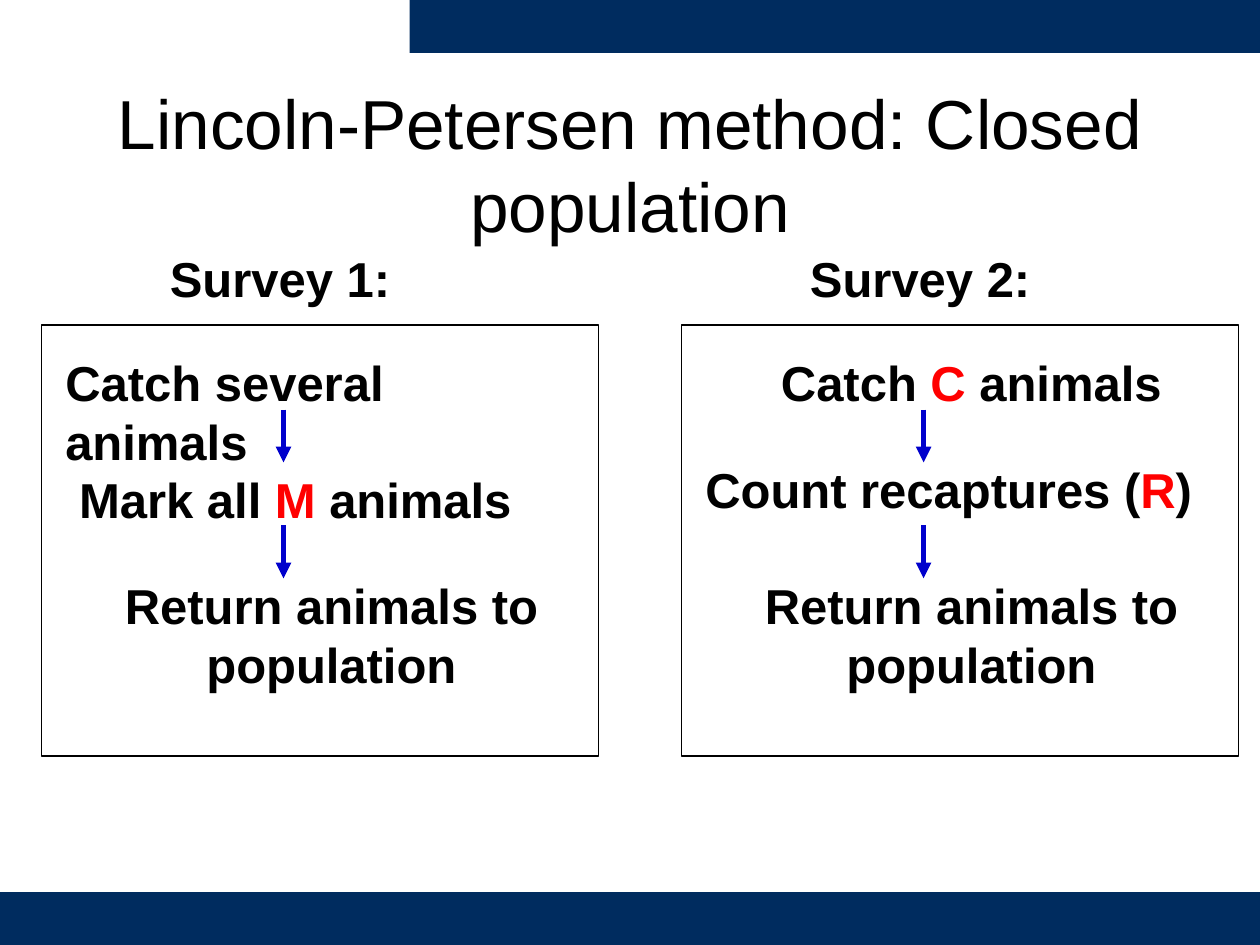
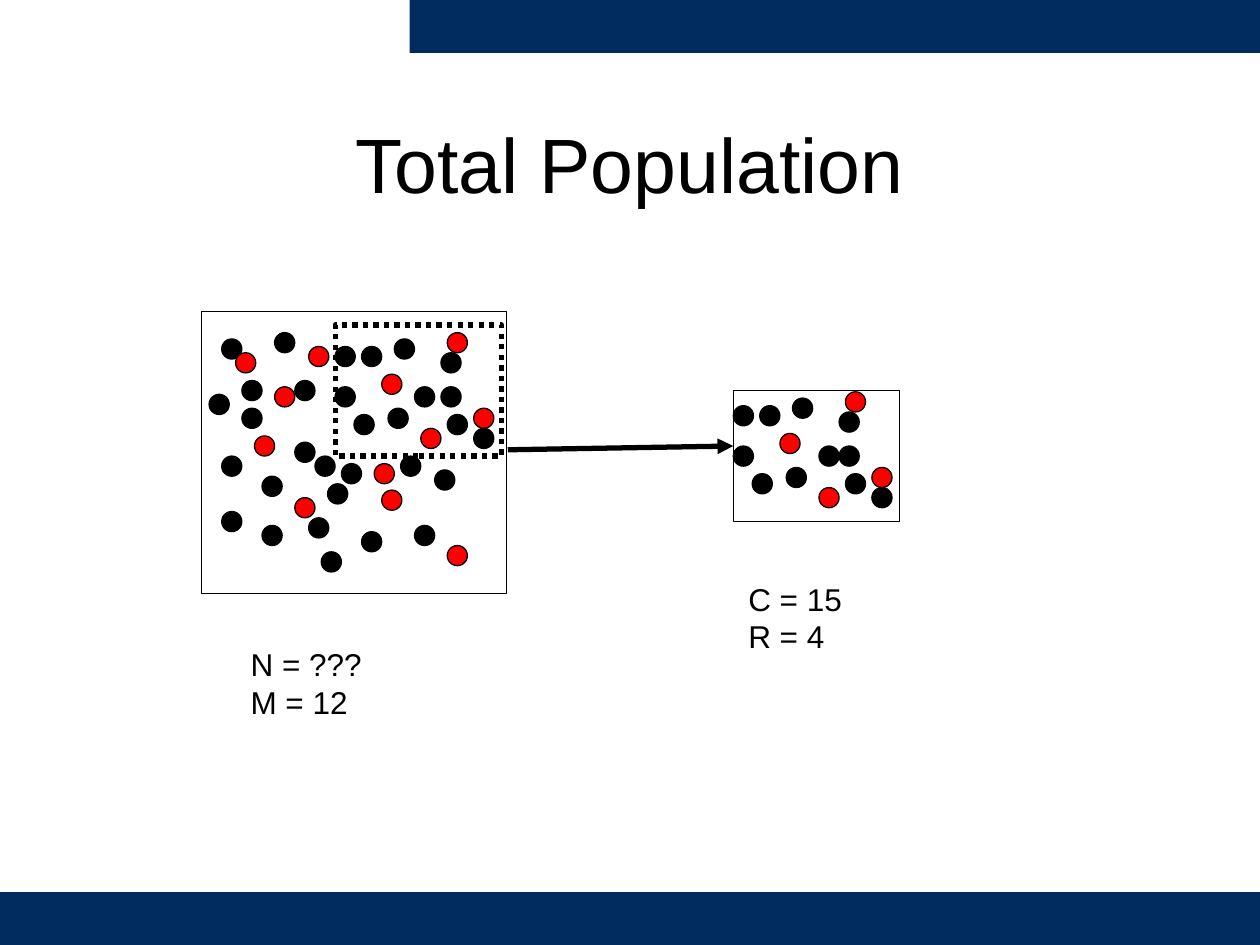
from lxml import etree
from pptx import Presentation
from pptx.dml.color import RGBColor
from pptx.enum import dml, shapes, text
from pptx.oxml.ns import qn
from pptx.util import Inches, Pt

NAVY, BLACK, RED, BLUE = "002C5F", "000000", "FF0000", "0000CC"
TITLE_ONLY = 5
DOT = 0.16

COLUMN_STEP = 5.08
# heading, then (left within column, top, runs); runs at odd places are red
SURVEYS = [
    ("Survey 1:", [(0.42, 2.75, ["Catch several animals"]),
                   (0.53, 3.68, ["Mark all ", "M", " animals"])]),
    ("Survey 2:", [(1.02, 2.75, ["Catch ", "C", " animals"]),
                   (0.42, 3.6, ["Count recaptures (", "R", ")"])]),
]

SAMPLE_SHIFT = (3.16, 0.47)
UNMARKED = [
    (1.76, 2.69), (3.29, 4.17), (1.76, 3.62), (3.18, 3.62), (2.6, 3.84),
    (2.08, 3.78), (2.18, 2.64), (1.66, 3.13), (1.92, 3.02), (2.34, 3.02),
    (2.34, 3.51), (1.92, 3.24), (2.08, 4.17), (2.71, 3.68), (3.45, 3.73),
    (2.55, 4.38), (1.76, 4.06), (2.5, 3.62), (2.87, 4.22), (2.45, 4.11),
]
MARKED = [
    (1.87, 2.8), (2.45, 2.75), (2.02, 3.46), (3.55, 4.33),
    (3.03, 3.89), (2.34, 3.95), (2.97, 3.68), (2.18, 3.07),
]
CAUGHT_UNMARKED = [
    (3.5, 3.07), (2.66, 2.75), (3.13, 2.69), (2.66, 3.07), (3.5, 2.8),
    (3.76, 3.4), (3.08, 3.24), (2.81, 3.29), (2.87, 2.75), (3.55, 3.29),
]
CAUGHT_MARKED = [(3.76, 3.24), (3.55, 2.64), (3.03, 2.97), (3.34, 3.4)]


def rgb(value):
    return RGBColor.from_string(value)


class Deck:
    def __init__(self):
        self.prs = Presentation()
        self.prs.slide_width, self.prs.slide_height = Inches(10), Inches(7.5)
        self.slide = self.canvas = None

    def add_slide(self, title, size):
        layout = self.prs.slide_layouts[TITLE_ONLY]
        self.slide = self.prs.slides.add_slide(layout)
        self.canvas = self.slide.shapes
        self.bands()
        sp = self.canvas.title
        place = dict(left=0.75, top=0.67, width=8.5, height=1.25)
        for name, value in place.items():
            setattr(sp, name, Inches(value))
        tf = sp.text_frame
        frame = dict(auto_size=text.MSO_AUTO_SIZE.NONE, word_wrap=True,
                     vertical_anchor=text.MSO_ANCHOR.MIDDLE)
        for name, value in frame.items():
            setattr(tf, name, value)
        p = tf.paragraphs[0]
        p.alignment = text.PP_ALIGN.CENTER
        self.run(p, title, size)

    def bands(self):
        self.shape(3.25, 0, 6.75, 0.42, fill=NAVY, line=None)
        self.shape(0, 7.08, 10, 0.42, fill=NAVY, line=None)

    def start_group(self):
        """Send the next shapes into a new group."""
        self.canvas = self.slide.shapes.add_group_shape().shapes

    def end_group(self):
        self.canvas = self.slide.shapes

    def run(self, p, words, size, color=BLACK, bold=False):
        r = p.add_run()
        r.text = words
        for name, value in dict(name="Arial", size=Pt(size), bold=bold).items():
            setattr(r.font, name, value)
        r.font.color.rgb = rgb(color)

    def text(self, x, y, w, h, lines, size, bold=False, wrap=True, center=False):
        """Each line is a list of runs; every second run is red."""
        sp = self.canvas.add_textbox(*map(Inches, (x, y, w, h)))
        tf = sp.text_frame
        tf.word_wrap = wrap
        tf.auto_size = text.MSO_AUTO_SIZE.SHAPE_TO_FIT_TEXT
        for i, runs in enumerate(lines):
            p = tf.add_paragraph() if i else tf.paragraphs[0]
            p.alignment = text.PP_ALIGN.CENTER if center else text.PP_ALIGN.LEFT
            for j, words in enumerate(runs):
                self.run(p, words, size, RED if j % 2 else BLACK, bold)

    def shape(self, x, y, w, h, fill=None, line=BLACK, width=0.75, dash=None,
              kind=shapes.MSO_SHAPE.RECTANGLE):
        sp = self.canvas.add_shape(kind, *map(Inches, (x, y, w, h)))
        sp.shadow.inherit = False
        for part, color in ((sp.fill, fill), (sp.line.fill, line)):
            if color:
                part.solid()
                part.fore_color.rgb = rgb(color)
            else:
                part.background()
        if line:
            sp.line.width = Pt(width)
            sp.line.dash_style = dash

    def dots(self, places, color, shift=(0, 0)):
        for x, y in places:
            self.shape(x + shift[0], y + shift[1], DOT, DOT, fill=color,
                       kind=shapes.MSO_SHAPE.OVAL)

    def arrow(self, x1, y1, x2, y2, color):
        c = self.canvas.add_connector(shapes.MSO_CONNECTOR.STRAIGHT,
                                      *map(Inches, (x1, y1, x2, y2)))
        c.line.color.rgb = rgb(color)
        c.line.width = Pt(3)
        etree.SubElement(c.line._get_or_add_ln(), qn("a:tailEnd"), type="triangle")
        etree.SubElement(c.element.spPr, qn("a:effectLst"))


def method_slide(deck):
    deck.add_slide("Lincoln-Petersen method: Closed population", 39.6)
    for i, (heading, steps) in enumerate(SURVEYS):
        x = i * COLUMN_STEP
        deck.text(x + 1.25, 1.92, 1.95, 0.57, [[heading]], 28, bold=True, wrap=False)
        for left, top, runs in steps:
            deck.text(x + left, top, 4.2, 0.57, [runs], 28, bold=True, wrap=False)
        deck.text(x + 0.42, 4.52, 4.42, 1.03, [["Return animals to population"]],
                  28, bold=True, center=True)
        for top in (3.25, 4.17):
            deck.arrow(x + 2.25, top, x + 2.25, top + 0.42, BLUE)
        deck.shape(x + 0.33, 2.58, 4.42, 3.42)


def population_slide(deck):
    deck.add_slide("Total Population", 44)
    deck.arrow(4.03, 3.57, 5.82, 3.54, BLACK)

    deck.start_group()
    deck.shape(1.6, 2.47, 2.42, 2.24)
    deck.dots(UNMARKED + CAUGHT_UNMARKED + [(3.29, 3.07)], BLACK)
    deck.dots(MARKED + CAUGHT_MARKED, RED)
    deck.shape(2.66, 2.58, 1.32, 1.04, width=3,
               dash=dml.MSO_LINE_DASH_STYLE.ROUND_DOT)

    deck.start_group()
    deck.shape(5.82, 3.1, 1.32, 1.04)
    deck.dots(CAUGHT_UNMARKED + [(3.34, 3.07)], BLACK, SAMPLE_SHIFT)
    deck.dots(CAUGHT_MARKED, RED, SAMPLE_SHIFT)
    deck.end_group()

    deck.text(5.84, 4.55, 1.32, 0.71, [["C = 15"], ["R = 4"]], 18)
    deck.text(1.89, 5.07, 1.32, 0.71, [["N = ???"], ["M = 12"]], 18)


def main():
    deck = Deck()
    method_slide(deck)
    population_slide(deck)
    deck.prs.save("out.pptx")


if __name__ == "__main__":
    main()
